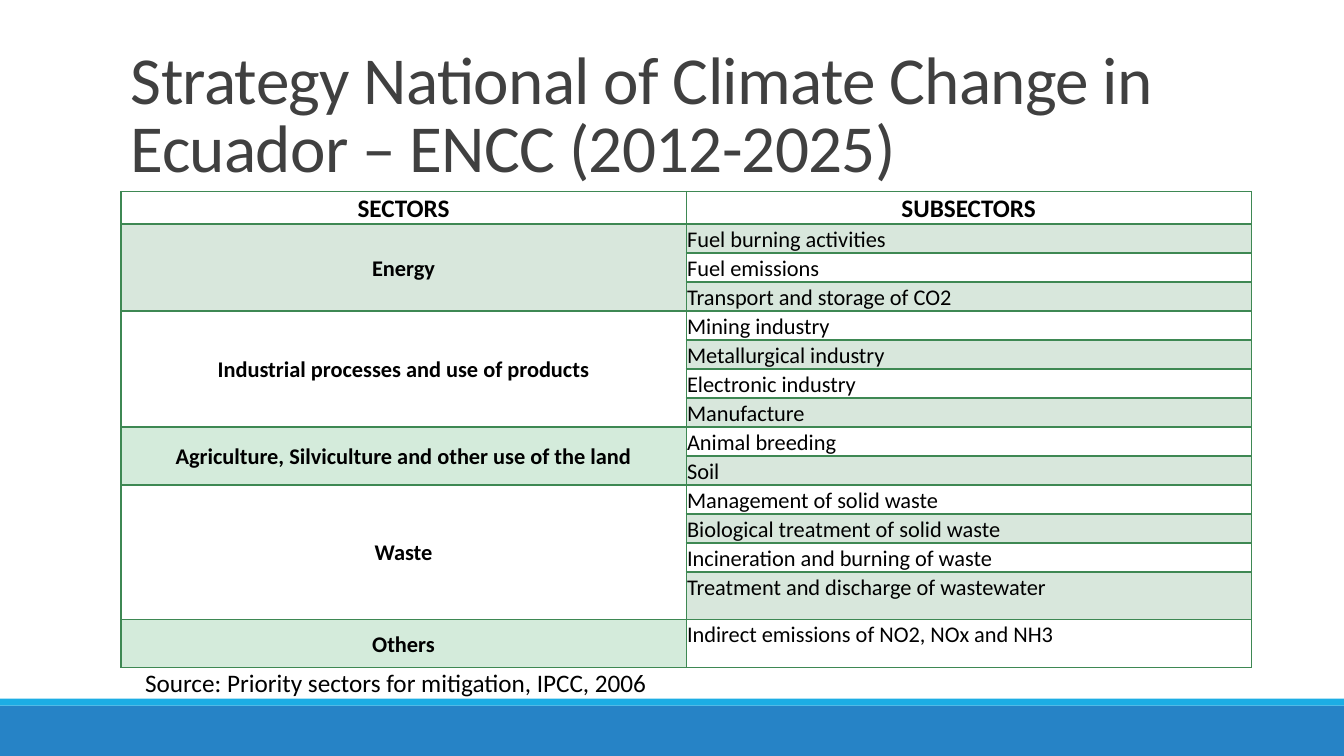
from lxml import etree
from pptx import Presentation
from pptx.dml.color import RGBColor
from pptx.enum.shapes import MSO_CONNECTOR, MSO_SHAPE
from pptx.enum.text import MSO_ANCHOR, PP_ALIGN
from pptx.oxml.ns import qn
from pptx.util import Pt

RECT, LINE = MSO_SHAPE.RECTANGLE, MSO_CONNECTOR.STRAIGHT
TOP, MIDDLE, BOTTOM = MSO_ANCHOR.TOP, MSO_ANCHOR.MIDDLE, MSO_ANCHOR.BOTTOM
LEFT, CENTER = PP_ALIGN.LEFT, PP_ALIGN.CENTER

FONT = "Calibri"
SLIDE_W, SLIDE_H = 960, 540
GREEN, PALE_GREEN, BLACK = "3E8853", "D4EBDB", "000000"
GREEN_TINT = (GREEN, 20)  # colour, opacity in percent

# Each sector: name, fill, subsectors
SECTORS = [
    ("Energy", GREEN_TINT,
     ["Fuel burning activities", "Fuel emissions", "Transport and storage of CO2"]),
    ("Industrial processes and use of products", None,
     ["Mining industry", "Metallurgical industry", "Electronic industry", "Manufacture"]),
    ("Agriculture, Silviculture and other use of the land", (PALE_GREEN, 100),
     ["Animal breeding", "Soil"]),
    ("Waste", None,
     ["Management of solid waste", "Biological treatment of solid waste",
      "Incineration and burning of waste", "Treatment and discharge of wastewater"]),
    ("Others", (PALE_GREEN, 100), ["Indirect emissions of NO2, NOx and NH3"]),
]


def rgb(color):
    return RGBColor.from_string(color)


def set_text(tf, text, size, color=BLACK, bold=False, align=LEFT, spacing=None):
    p = tf.paragraphs[0]
    p.text = text
    p.alignment = align
    p.line_spacing = spacing
    p.font.name, p.font.size, p.font.bold = FONT, Pt(size), bold
    p.font.color.rgb = rgb(color)
    return p


def add_text_box(slide, x, y, w, h, anchor=TOP):
    tf = slide.shapes.add_textbox(Pt(x), Pt(y), Pt(w), Pt(h)).text_frame
    tf.word_wrap = True
    tf.vertical_anchor = anchor
    return tf


def add_bar(slide, x, y, w, h, color):
    sp = slide.shapes.add_shape(RECT, Pt(x), Pt(y), Pt(w), Pt(h))
    sp.shadow.inherit = False
    sp.fill.solid()
    sp.fill.fore_color.rgb = rgb(color)
    sp.line.fill.background()


def add_background(slide, x, y, w, h):
    # Footer bars
    add_bar(slide, x, y + h - 36, w, 36, "2683C6")
    add_bar(slide, x, y + h - 41, w, 5, "1CADE4")
    # Rule under the title
    rule_y = Pt(y + 136.8)
    rule = slide.shapes.add_connector(LINE, Pt(x + 94.3), rule_y, Pt(x + 879.1), rule_y)
    rule.line.color.rgb = rgb("808080")
    rule.line.width = Pt(0.5)
    etree.SubElement(rule._element.spPr, qn("a:effectLst"))


def add_title(slide, x, y, w, h):
    tf = add_text_box(slide, x, y, w, h, BOTTOM)
    p = set_text(tf, "Strategy National of Climate Change in Ecuador – ENCC (2012-2025)",
                 48, "404040", spacing=0.85)
    p.runs[0]._r.get_or_add_rPr().set("spc", "-50")


def fill_cell(cell, fill):
    if fill is None:
        cell.fill.background()
        return
    color, opacity = fill
    cell.fill.solid()
    cell.fill.fore_color.rgb = rgb(color)
    if opacity < 100:
        clr = cell._tc.tcPr.find(qn("a:solidFill"))[0]
        etree.SubElement(clr, qn("a:alpha")).set("val", str(opacity * 1000))


def add_borders(cell, top=1, bottom=1):
    widths = {"a:lnL": 1, "a:lnR": 1, "a:lnT": top, "a:lnB": bottom}
    for i, (tag, width) in enumerate(widths.items()):
        ln = etree.Element(qn(tag), w=str(Pt(width)))
        solid = etree.SubElement(ln, qn("a:solidFill"))
        etree.SubElement(solid, qn("a:srgbClr")).set("val", GREEN)
        cell._tc.get_or_add_tcPr().insert(i, ln)


def write_cell(cell, text, size=16, bold=False, align=LEFT, anchor=TOP):
    cell.margin_left = cell.margin_right = Pt(0.7)
    cell.margin_top = cell.margin_bottom = 0
    cell.vertical_anchor = anchor
    set_text(cell.text_frame, text, size, bold=bold, align=align, spacing=1.07)


def add_sector_table(slide, x, y, w, h):
    count = sum(len(subsectors) for _, _, subsectors in SECTORS)
    table = slide.shapes.add_table(count + 1, 2, Pt(x), Pt(y), Pt(w), Pt(h)).table
    table.first_row = table.horz_banding = False
    for col in table.columns:
        col.width = Pt(w / 2)
    # The header and the last two rows are taller
    header_h, tall_h = 21.6, 34
    row_h = (h - header_h - 2 * tall_h) / (count - 2)
    heights = [header_h] + [row_h] * (count - 2) + [tall_h] * 2
    for row, height in zip(table.rows, heights):
        row.height = Pt(height)

    # Header
    for c, heading in enumerate(["SECTORS", "SUBSECTORS"]):
        write_cell(table.cell(0, c), heading, 18, True, CENTER)
        fill_cell(table.cell(0, c), None)

    # Sectors span their subsectors; odd rows are tinted on the right
    r = 1
    for sector, fill, subsectors in SECTORS:
        last = r + len(subsectors) - 1
        if last > r:
            table.cell(r, 0).merge(table.cell(last, 0))
        write_cell(table.cell(r, 0), sector, bold=True, align=CENTER, anchor=MIDDLE)
        for r, subsector in enumerate(subsectors, r):
            fill_cell(table.cell(r, 0), fill)
            write_cell(table.cell(r, 1), subsector)
            fill_cell(table.cell(r, 1), GREEN_TINT if r % 2 else None)
        r += 1

    # Borders, heavier under the header
    for r in range(count + 1):
        for c in range(2):
            add_borders(table.cell(r, c), top=2 if r == 1 else 1, bottom=2 if r == 0 else 1)


def add_source(slide, x, y, w, h):
    tf = add_text_box(slide, x, y, w, h)
    set_text(tf, "Source: Priority sectors for mitigation, IPCC, 2006", 18)


def main():
    prs = Presentation()
    prs.slide_width, prs.slide_height = Pt(SLIDE_W), Pt(SLIDE_H)
    slide = prs.slides.add_slide(prs.slide_layouts[6])
    add_background(slide, 0, 0, SLIDE_W, SLIDE_H)
    add_title(slide, 86.4, 22.3, 792, 114.5)
    add_sector_table(slide, 86.4, 136.8, 807.4, 338.4)
    add_source(slide, 96.5, 473, 401.8, 28.8)
    prs.save("out.pptx")


if __name__ == "__main__":
    main()
